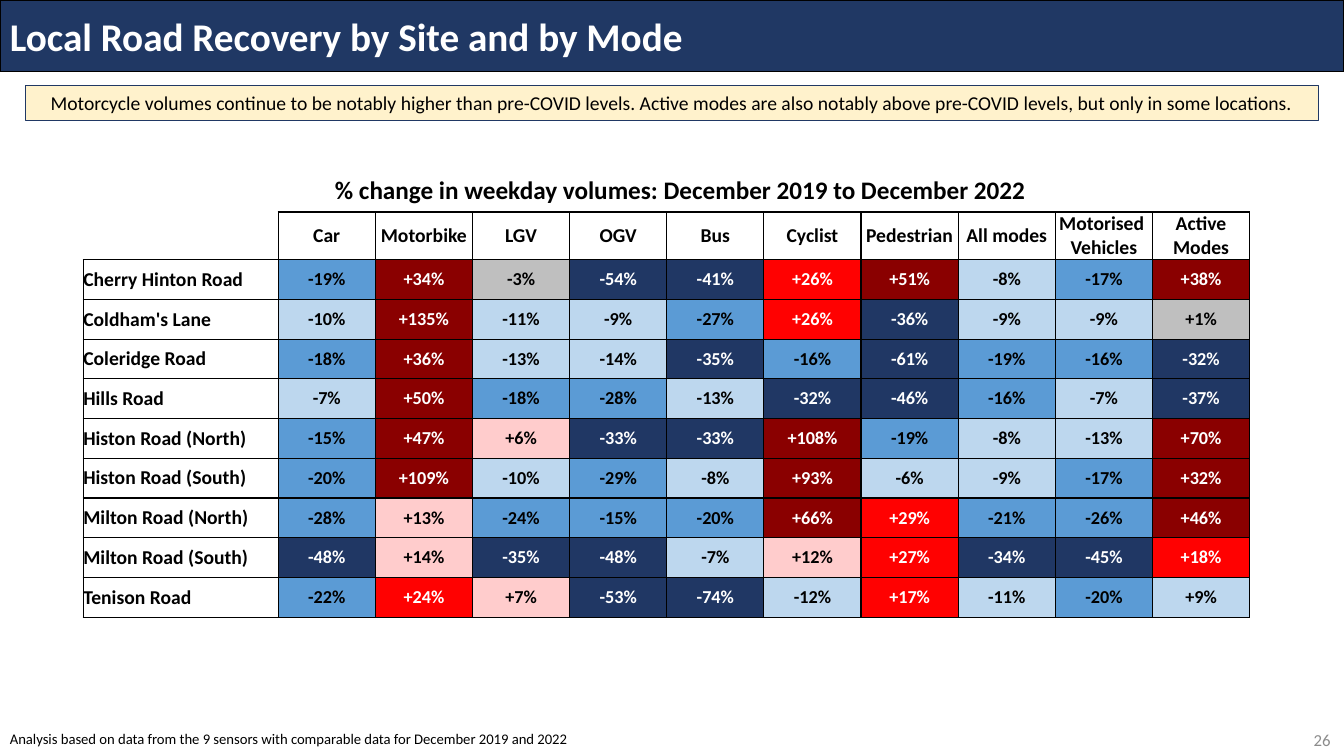
from lxml import etree
from pptx import Presentation
from pptx import util as u
from pptx.dml.color import RGBColor
from pptx.enum import shapes, text
from pptx.oxml import ns

FONT = "Calibri"
BLACK, WHITE, NAVY, CREAM, GREY = "000000", "FFFFFF", "203864", "FFF2CC", "8C8C8C"
LEFT, CENTRE, RIGHT = text.PP_ALIGN.LEFT, text.PP_ALIGN.CENTER, text.PP_ALIGN.RIGHT
TOP, MIDDLE = text.MSO_ANCHOR.TOP, text.MSO_ANCHOR.MIDDLE

MODES = ["Car", "Motorbike", "LGV", "OGV", "Bus", "Cyclist", "Pedestrian",
         "All modes", "Motorised \nVehicles", "Active Modes"]
CHANGES = {
    "Cherry Hinton Road": [-19, 34, -3, -54, -41, 26, 51, -8, -17, 38],
    "Coldham's Lane": [-10, 135, -11, -9, -27, 26, -36, -9, -9, 1],
    "Coleridge Road": [-18, 36, -13, -14, -35, -16, -61, -19, -16, -32],
    "Hills Road": [-7, 50, -18, -28, -13, -32, -46, -16, -7, -37],
    "Histon Road (North)": [-15, 47, 6, -33, -33, 108, -19, -8, -13, 70],
    "Histon Road (South)": [-20, 109, -10, -29, -8, 93, -6, -9, -17, 32],
    "Milton Road (North)": [-28, 13, -24, -15, -20, 66, 29, -21, -26, 46],
    "Milton Road (South)": [-48, 14, -35, -48, -7, 12, 27, -34, -45, 18],
    "Tenison Road": [-22, 24, 7, -53, -74, -12, 17, -11, -20, 9],
}
# Upper limit of each band, its fill and its text colour
BANDS = [(-30, "203764", WHITE), (-15, "5B9BD5", BLACK), (-5, "BDD7EE", BLACK),
         (5, "BFBFBF", BLACK), (15, "FFCCCC", BLACK), (30, "FF0101", WHITE),
         (1000, "8A0000", WHITE)]
# Cells shaded outside the bands
SPECIAL = {("Tenison Road", "Active Modes"): ("BDD7EE", BLACK)}


def rgb(colour):
    return RGBColor.from_string(colour)


def write(frame, words, size=14, colour=BLACK, bold=False, align=LEFT):
    """Fill a text frame, one paragraph per line of words."""
    frame.word_wrap = True
    for index, line in enumerate(words.split("\n")):
        para = frame.add_paragraph() if index else frame.paragraphs[0]
        para.alignment = align
        span = para.add_run()
        span.text = line
        span.font.name, span.font.size, span.font.bold = FONT, u.Pt(size), bold
        span.font.color.rgb = rgb(colour)


def add_label(page, place, words, anchor=TOP, **style):
    box = page.shapes.add_textbox(*map(u.Pt, place))
    box.text_frame.vertical_anchor = anchor
    write(box.text_frame, words, **style)


def add_banner(page, place, words, fill, line, side=7.2, **style):
    box = page.shapes.add_shape(shapes.MSO_SHAPE.RECTANGLE, *map(u.Pt, place))
    box.shadow.inherit = False
    box.fill.solid()
    box.fill.fore_color.rgb = rgb(fill)
    box.line.color.rgb = rgb(line)
    box.line.width = u.Pt(1)
    frame = box.text_frame
    frame.vertical_anchor = MIDDLE
    frame.margin_left = frame.margin_right = u.Pt(side)
    write(frame, words, **style)


def set_borders(cell, sides):
    """Draw black borders on the given sides and clear the others."""
    properties = cell._tc.get_or_add_tcPr()
    for index, side in enumerate("LRTB"):
        edge = etree.Element(ns.qn("a:ln" + side), w=str(u.Pt(1)))
        if side in sides:
            fill = etree.SubElement(edge, ns.qn("a:solidFill"))
            etree.SubElement(fill, ns.qn("a:srgbClr"), val=BLACK)
        else:
            etree.SubElement(edge, ns.qn("a:noFill"))
        properties.insert(index, edge)


def fill_cell(cell, words="", fill=None, sides="LRTB", **style):
    cell.margin_left = cell.margin_right = cell.margin_top = cell.margin_bottom = 0
    cell.vertical_anchor = MIDDLE
    if fill:
        cell.fill.solid()
        cell.fill.fore_color.rgb = rgb(fill)
    else:
        cell.fill.background()
    set_borders(cell, sides)
    if words:
        write(cell.text_frame, words, bold=True, **style)


def shade(site, mode, change):
    band = next(colours for limit, *colours in BANDS if change <= limit)
    return SPECIAL.get((site, mode), band)


def add_change_table(page, left, top, site_width, mode_width, head_height, row_height):
    width = site_width + mode_width * len(MODES)
    height = head_height + row_height * len(CHANGES)
    table = page.shapes.add_table(len(CHANGES) + 1, len(MODES) + 1,
                                  *map(u.Pt, (left, top, width, height))).table
    table.first_row = table.horz_banding = False
    for index, column in enumerate(table.columns):
        column.width = u.Pt(mode_width if index else site_width)
    for index, row in enumerate(table.rows):
        row.height = u.Pt(row_height if index else head_height)

    # Header row
    fill_cell(table.cell(0, 0), sides="RB")
    for column, mode in enumerate(MODES, 1):
        fill_cell(table.cell(0, column), mode, align=CENTRE)

    # One row per site
    for row, (site, changes) in enumerate(CHANGES.items(), 1):
        fill_cell(table.cell(row, 0), site)
        for column, (mode, change) in enumerate(zip(MODES, changes), 1):
            fill, colour = shade(site, mode, change)
            fill_cell(table.cell(row, column), f"{change:+d}%", fill=fill,
                      colour=colour, size=13, align=CENTRE)


def main():
    deck = Presentation()
    deck.slide_width, deck.slide_height = u.Pt(960), u.Pt(540)
    page = deck.slides.add_slide(deck.slide_layouts[6])

    # Table of changes
    add_change_table(page, left=59.5, top=151.4, site_width=139.2, mode_width=69.4,
                     head_height=34, row_height=28.4)

    # Title and key message
    add_banner(page, (0, 0, 960, 51), "Local Road Recovery by Site and by Mode",
               NAVY, BLACK, size=28, colour=WHITE, bold=True)
    add_banner(page, (18, 61, 924, 25),
               "Motorcycle volumes continue to be notably higher than pre-COVID levels. "
               "Active modes are also notably above pre-COVID levels, but only in some "
               "locations.", CREAM, NAVY, side=0, align=CENTRE)

    # Table heading, footnote and page number
    add_label(page, (137.5, 121, 697, 29),
              "% change in weekday volumes: December 2019 to December 2022",
              size=18, bold=True, align=CENTRE)
    add_label(page, (0, 517.5, 958, 20),
              "Analysis based on data from the 9 sensors with comparable data for "
              "December 2019 and 2022", size=10.5)
    add_label(page, (741.5, 514, 216, 29), "26", anchor=MIDDLE, size=12,
              colour=GREY, align=RIGHT)

    deck.save("out.pptx")


if __name__ == "__main__":
    main()
